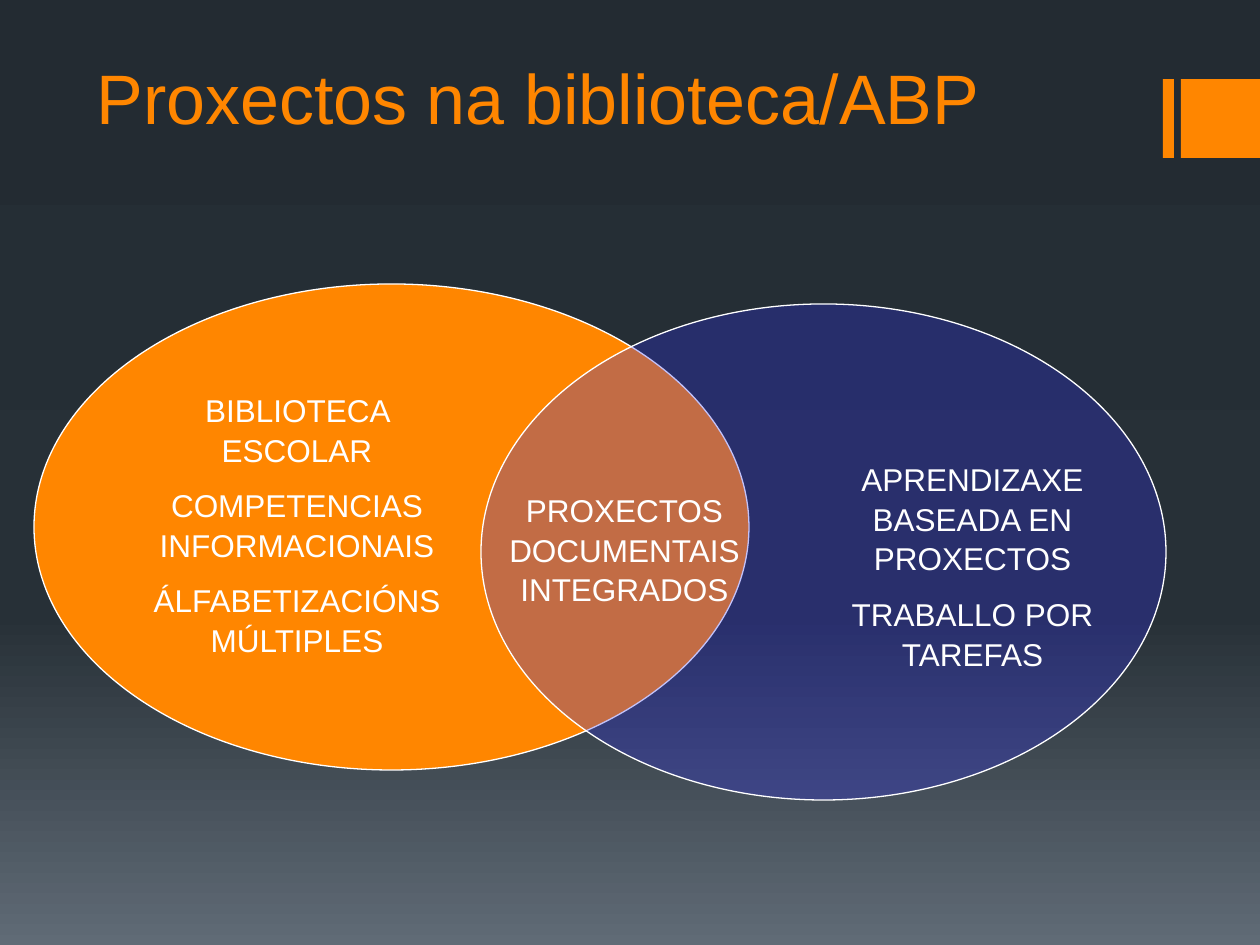
"""Builds a Venn slide on library projects and project-based learning."""
from copy import deepcopy

from lxml import etree
from pptx import Presentation
from pptx.dml.color import RGBColor
from pptx.enum.shapes import MSO_SHAPE
from pptx.enum.text import MSO_ANCHOR, MSO_AUTO_SIZE, PP_ALIGN
from pptx.oxml.ns import qn
from pptx.util import Pt

RECT, OVAL = MSO_SHAPE.RECTANGLE, MSO_SHAPE.OVAL
LEFT, MID = PP_ALIGN.LEFT, PP_ALIGN.CENTER
BOTTOM, TOP = MSO_ANCHOR.BOTTOM, MSO_ANCHOR.TOP
GROW = MSO_AUTO_SIZE.SHAPE_TO_FIT_TEXT
PX = 914400 / 126
FONT = "Arial"
COLORS = {"accent": "FF8600", "blue": "2E2EF0", "white": "FFFFFF"}
BACK = [(0, "232B32"), (0.65, "273037"), (1, "606B76")]

TITLE = ("Proxectos na biblioteca/ABP", (84, 45, 1008, 100))
BARS = [(1163, 79, 11, 79), (1181, 79, 79, 79)]
OVALS = [
    ((34, 284, 715, 486), "accent", 100),
    ((481, 304, 685, 496), "blue", 29),
]
LABELS = [
    ((123, 383, 348, 277), ["BIBLIOTECA ESCOLAR", "COMPETENCIAS INFORMACIONAIS",
                            "ÁLFABETIZACIÓNS MÚLTIPLES"]),
    ((819, 452, 307, 221), ["APRENDIZAXE BASEADA EN PROXECTOS",
                            "TRABALLO POR TAREFAS"]),
    ((491, 483, 267, 126), ["PROXECTOS DOCUMENTAIS INTEGRADOS"]),
]


def scale(box):
    return [round(n * PX) for n in box]


def tint(name):
    return RGBColor.from_string(COLORS[name])


def write(para, text, size, color, align):
    para.alignment = align
    run = para.add_run()
    run.text = text
    run.font.name, run.font.size = FONT, Pt(size)
    run.font.color.rgb = tint(color)


def paint(slide):
    fill = slide.background.fill
    fill.gradient()
    fill.gradient_angle = 270
    stops = slide.background._cSld.find(".//" + qn("a:gsLst"))
    stops.append(deepcopy(stops[-1]))
    for stop, (place, color) in zip(fill.gradient_stops, BACK):
        stop.position = place
        stop.color.rgb = RGBColor.from_string(color)


def draw(slide, kind, box, color, alpha=100, edge=None):
    shape = slide.shapes.add_shape(kind, *scale(box))
    shape.shadow.inherit = False
    shape.fill.solid()
    shape.fill.fore_color.rgb = tint(color)
    if alpha < 100:
        tone = shape._element.spPr.find(qn("a:solidFill"))[0]
        etree.SubElement(tone, qn("a:alpha"), val=str(alpha * 1000))
    if edge:
        shape.line.color.rgb = tint(edge)
        shape.line.width = Pt(0.75)
    else:
        shape.line.fill.background()


def label(slide, box, texts):
    frame = slide.shapes.add_textbox(*scale(box)).text_frame
    frame.word_wrap = True
    frame.auto_size = GROW
    frame.vertical_anchor = TOP
    for i, text in enumerate(texts):
        para = frame.add_paragraph() if i else frame.paragraphs[0]
        para.line_spacing = 1.05
        para.space_before = Pt(9 if i else 0)
        write(para, text, 18, "white", MID)


def main():
    deck = Presentation()
    deck.slide_width, deck.slide_height = scale((1260, 945))
    slide = deck.slides.add_slide(deck.slide_layouts[5])
    paint(slide)
    for box in BARS:
        draw(slide, RECT, box, "accent")
    text, box = TITLE
    head = slide.shapes.title
    head.left, head.top, head.width, head.height = scale(box)
    head.text_frame.vertical_anchor = BOTTOM
    write(head.text_frame.paragraphs[0], text, 40, "accent", LEFT)
    for box, color, alpha in OVALS:
        draw(slide, OVAL, box, color, alpha, "white")
    for box, texts in LABELS:
        label(slide, box, texts)
    deck.save("out.pptx")


if __name__ == "__main__":
    main()
